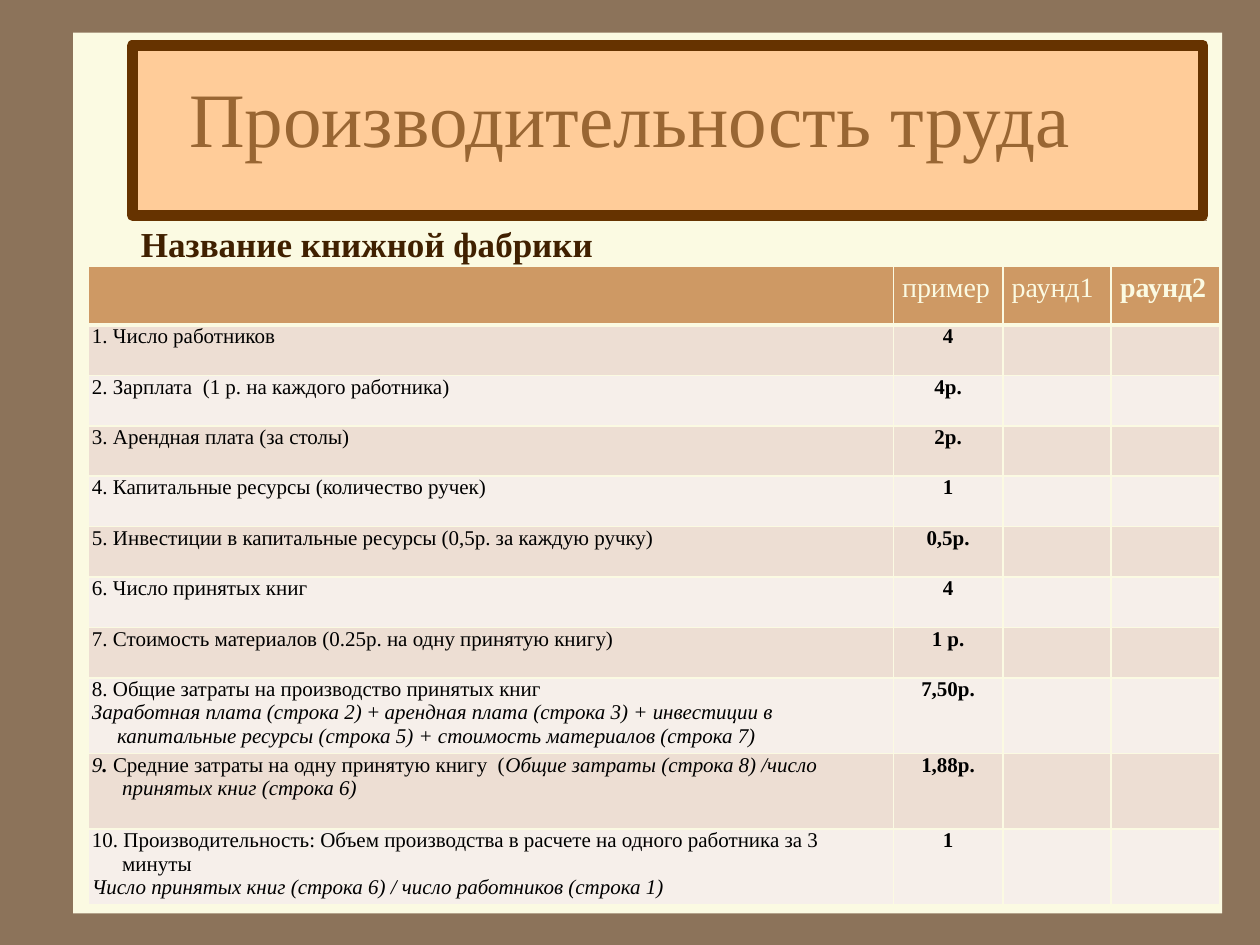
from lxml import etree
from pptx import Presentation
from pptx.dml.color import RGBColor
from pptx.enum.shapes import MSO_CONNECTOR, MSO_SHAPE
from pptx.enum.text import MSO_ANCHOR, PP_ALIGN
from pptx.oxml.ns import qn
from pptx.util import Inches, Pt

RECTANGLE = MSO_SHAPE.RECTANGLE
STRAIGHT = MSO_CONNECTOR.STRAIGHT
LEFT, CENTER = PP_ALIGN.LEFT, PP_ALIGN.CENTER
MIDDLE, BOTTOM = MSO_ANCHOR.MIDDLE, MSO_ANCHOR.BOTTOM

FONT = "Times New Roman"
COLORS = {
    "background": "8C735A", "paper": "FBFAE2", "rule": "A08366",
    "banner": "FFCC99", "frame": "663300", "title": "996633",
    "subtitle": "402000", "header": "CE9964", "odd": "EDDED3",
    "even": "F6EFEA", "text": "000000",
}
COLUMNS = [6.39, 0.87, 0.86, 0.86]
ROWS = [0.47] + [0.4] * 7 + [0.6] * 3
HEADERS = [("пример", False), ("раунд1", False), ("раунд2", True)]
PLAIN, BOLD, ITALIC = {}, {"bold": True}, {"italic": True}
BOLD_ITALIC = BOLD | ITALIC

ITEMS = [
    ([[("1. Число работников", PLAIN)]], "4", 0.2, 12),
    ([[("2. Зарплата  (1 р. на каждого работника)", PLAIN)]], "4р.", 0.2, 12),
    ([[("3. Арендная плата (за столы)", PLAIN)]], "2р.", 0.2, 12),
    ([[("4. Капитальные ресурсы (количество ручек)", PLAIN)]], "1", 0.2, 12),
    ([[("5. Инвестиции в капитальные ресурсы (0,5р. за каждую ручку)", PLAIN)]],
     "0,5р.", 0.2, 6),
    ([[("6. Число принятых книг", PLAIN)]], "4", 0.2, 12),
    ([[("7. Стоимость материалов (0.25р. на одну принятую книгу)", PLAIN)]],
     "1 р.", 0.2, 6),
    ([[("8. Общие затраты на производство принятых книг", PLAIN)],
      [("Заработная плата (строка 2) ", ITALIC), ("+ ", PLAIN),
       ("арендная плата (строка 3) + инвестиции в капитальные ресурсы "
        "(строка 5) + стоимость материалов (строка 7)", ITALIC)]],
     "7,50р.", 0.2, 6),
    ([[("9", ITALIC), (". ", BOLD_ITALIC),
       ("Средние затраты на одну принятую книгу  (", PLAIN),
       ("Общие затраты (строка 8) /число принятых книг (строка 6)", ITALIC)]],
     "1,88р.", 0.24, 6),
    ([[("10. Производительность: Объем производства в расчете на одного "
        "работника за 3 минуты", PLAIN)],
      [("Число принятых книг (строка 6) / число работников (строка 1)", ITALIC)]],
     "1", 0.24, 6),
]


def color(name):
    return RGBColor.from_string(COLORS[name])


def paint(fill, name):
    fill.solid()
    fill.fore_color.rgb = color(name)


def write(para, spans, size, tint, align=LEFT, hang=0, after=0):
    para.alignment = align
    para.space_after = Pt(after)
    if hang:
        properties = para._p.get_or_add_pPr()
        properties.set("marL", str(Inches(hang)))
        properties.set("indent", str(-Inches(hang)))
    for text, style in spans:
        span = para.add_run()
        span.text = text
        values = {"name": FONT, "size": Pt(size), "bold": False, "italic": False}
        for key, value in (values | style).items():
            setattr(span.font, key, value)
        span.font.color.rgb = color(tint)


def add_panel(page, box, fill, line=None, width=0):
    panel = page.shapes.add_shape(RECTANGLE, *map(Inches, box))
    panel.shadow.inherit = False
    paint(panel.fill, fill)
    if line:
        panel.line.color.rgb = color(line)
        panel.line.width = Pt(width)
    else:
        panel.line.fill.background()


def add_rule(page, left, top, width):
    rule = page.shapes.add_connector(
        STRAIGHT, Inches(left), Inches(top), Inches(left + width), Inches(top))
    rule.line.color.rgb = color("rule")
    rule.line.width = Pt(0.25)
    etree.SubElement(rule._element.spPr, qn("a:effectLst"))


def add_heading(page, box, text, size, tint, align, anchor, style):
    heading = page.shapes.add_textbox(*map(Inches, box))
    frame = heading.text_frame
    frame.word_wrap = True
    frame.vertical_anchor = anchor
    write(frame.paragraphs[0], [(text, style)], size, tint, align)


def set_borders(cell, row):
    properties = cell._tc.get_or_add_tcPr()
    heavy = {0: "lnB", 1: "lnT"}.get(row)
    for side in ("lnL", "lnR", "lnT", "lnB"):
        width = Pt(3 if side == heavy else 1)
        line = etree.SubElement(properties, qn("a:" + side), w=str(width))
        fill = etree.SubElement(line, qn("a:solidFill"))
        etree.SubElement(fill, qn("a:srgbClr"), val=COLORS["paper"])


def set_margins(cell, side, end):
    values = {"margin_left": side, "margin_right": side,
              "margin_top": end, "margin_bottom": end}
    for key, value in values.items():
        setattr(cell, key, Inches(value))


def add_cost_table(page, left, top):
    box = (left, top, sum(COLUMNS), sum(ROWS))
    table = page.shapes.add_table(
        len(ROWS), len(COLUMNS), *map(Inches, box)).table
    for column, width in zip(table.columns, COLUMNS):
        column.width = Inches(width)
    for index, height in enumerate(ROWS):
        table.rows[index].height = Inches(height)
        fill = "header" if index == 0 else "odd" if index % 2 else "even"
        for cell in table.rows[index].cells:
            set_borders(cell, index)
            paint(cell.fill, fill)
            set_margins(cell, *((0.03, 0) if index else (0.07, 0.05)))

    for column, (text, bold) in enumerate(HEADERS, 1):
        para = table.cell(0, column).text_frame.paragraphs[0]
        write(para, [(text, {"bold": bold})], 16, "paper")

    for row, (lines, example, hang, after) in enumerate(ITEMS, 1):
        frame = table.cell(row, 0).text_frame
        for index, spans in enumerate(lines):
            para = frame.add_paragraph() if index else frame.paragraphs[0]
            write(para, spans, 12, "text", hang=hang)
        para = table.cell(row, 1).text_frame.paragraphs[0]
        write(para, [(example, BOLD)], 12, "text", CENTER, after=after)


def main():
    deck = Presentation()
    deck.slide_width, deck.slide_height = Inches(10), Inches(7.5)
    page = deck.slides.add_slide(deck.slide_layouts[6])
    paint(page.background.fill, "background")
    add_panel(page, (0.58, 0.26, 9.12, 6.99), "paper")
    add_rule(page, 1.11, 1.75, 8.47)
    add_panel(page, (1.05, 0.36, 8.5, 1.35), "banner", "frame", 6)
    add_heading(page, (0.5, 0.3, 9, 1.25), "Производительность труда",
                44, "title", CENTER, MIDDLE, PLAIN)
    add_heading(page, (1.02, 1.8, 8.59, 0.35), "Название книжной фабрики",
                20, "subtitle", LEFT, BOTTOM, BOLD)
    add_cost_table(page, 0.7, 2.11)
    deck.save("out.pptx")


if __name__ == "__main__":
    main()
